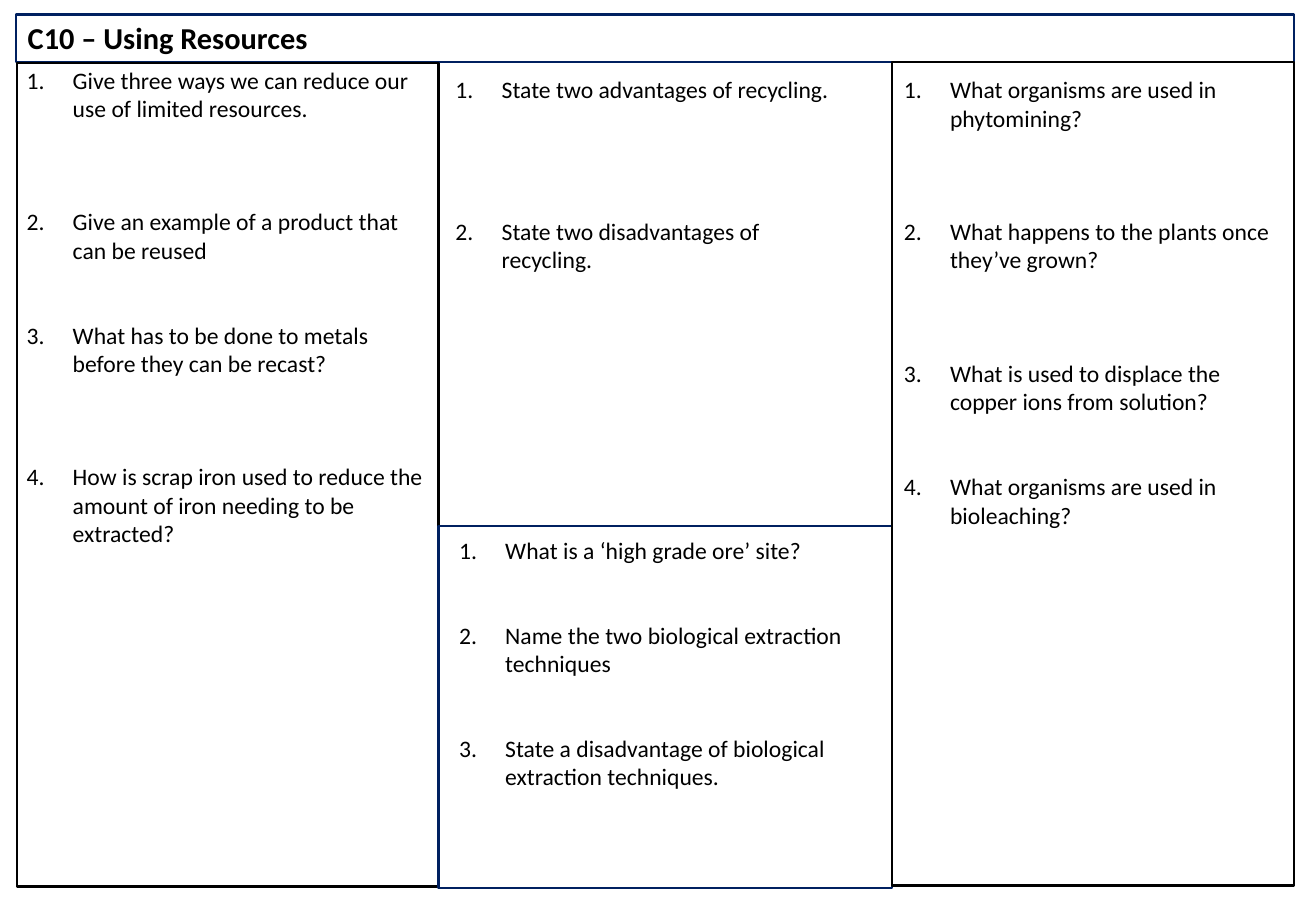
"""Build the C10 Using Resources question sheet."""
from lxml.etree import SubElement
from pptx import Presentation
from pptx.dml.color import RGBColor
from pptx.enum.shapes import MSO_SHAPE
from pptx.oxml.ns import qn
from pptx.util import Inches, Pt

BLACK = RGBColor(0x00, 0x00, 0x00)
NAVY = RGBColor(0x00, 0x20, 0x60)
LINE_PITCH = 16.8

PANELS = [
    (0.13, 0.12, 10.52, 0.39, NAVY),
    (0.14, 0.52, 3.47, 6.78, BLACK),
    (3.61, 4.33, 3.73, 2.98, NAVY),
    (7.34, 0.51, 3.31, 6.78, BLACK),
]

# Each question is paired with the number of answer lines above it.
QUESTIONS = [
    ((0.12, 0.49, 3.48, 6.7), [
        (0, "Give three ways we can reduce our use of limited resources."),
        (3, "Give an example of a product that can be reused"),
        (2, "What has to be done to metals before they can be recast?"),
        (3, "How is scrap iron used to reduce the amount of iron needing to be extracted?"),
    ]),
    ((3.65, 0.57, 3.48, 1.99), [
        (0, "State two advantages of recycling."),
        (4, "State two disadvantages of recycling."),
    ]),
    ((3.68, 4.36, 3.64, 2.22), [
        (0, "What is a ‘high grade ore’ site?"),
        (2, "Name the two biological extraction techniques"),
        (2, "State a disadvantage of biological extraction techniques."),
    ]),
    ((7.34, 0.57, 3.29, 4.81), [
        (0, "What organisms are used in phytomining?"),
        (3, "What happens to the plants once they’ve grown?"),
        (3, "What is used to displace the copper ions from solution?"),
        (2, "What organisms are used in bioleaching?"),
    ]),
]


def add_text_frame(s, box):
    tf = s.shapes.add_textbox(*map(Inches, box)).text_frame
    tf.word_wrap = True
    return tf


def add_run(p, text, size, bold=False):
    r = p.add_run()
    r.text = text
    r.font.name = "Calibri"
    r.font.size = Pt(size)
    r.font.bold = bold
    r.font.color.rgb = BLACK


prs = Presentation()
prs.slide_width = Inches(10.83)
prs.slide_height = Inches(7.5)
s = prs.slides.add_slide(prs.slide_layouts[6])

for *box, color in PANELS:
    sp = s.shapes.add_shape(MSO_SHAPE.RECTANGLE, *map(Inches, box))
    sp.shadow.inherit = False
    sp.fill.background()
    sp.line.color.rgb = color
    sp.line.width = Pt(1.5)

tf = add_text_frame(s, (0.13, 0.11, 6.71, 0.4))
add_run(tf.paragraphs[0], "C10 – Using Resources", 18, True)

for box, questions in QUESTIONS:
    tf = add_text_frame(s, box)
    for i, (answer_lines, question) in enumerate(questions):
        p = tf.add_paragraph() if i else tf.paragraphs[0]
        p.space_before = Pt(answer_lines * LINE_PITCH)
        pPr = p._p.get_or_add_pPr()
        pPr.set("marL", str(Inches(0.38)))
        pPr.set("indent", str(-Inches(0.38)))
        SubElement(pPr, qn("a:buFont"), typeface="+mj-lt")
        SubElement(pPr, qn("a:buAutoNum"), type="arabicPeriod")
        add_run(p, question, 14)

prs.save("out.pptx")
